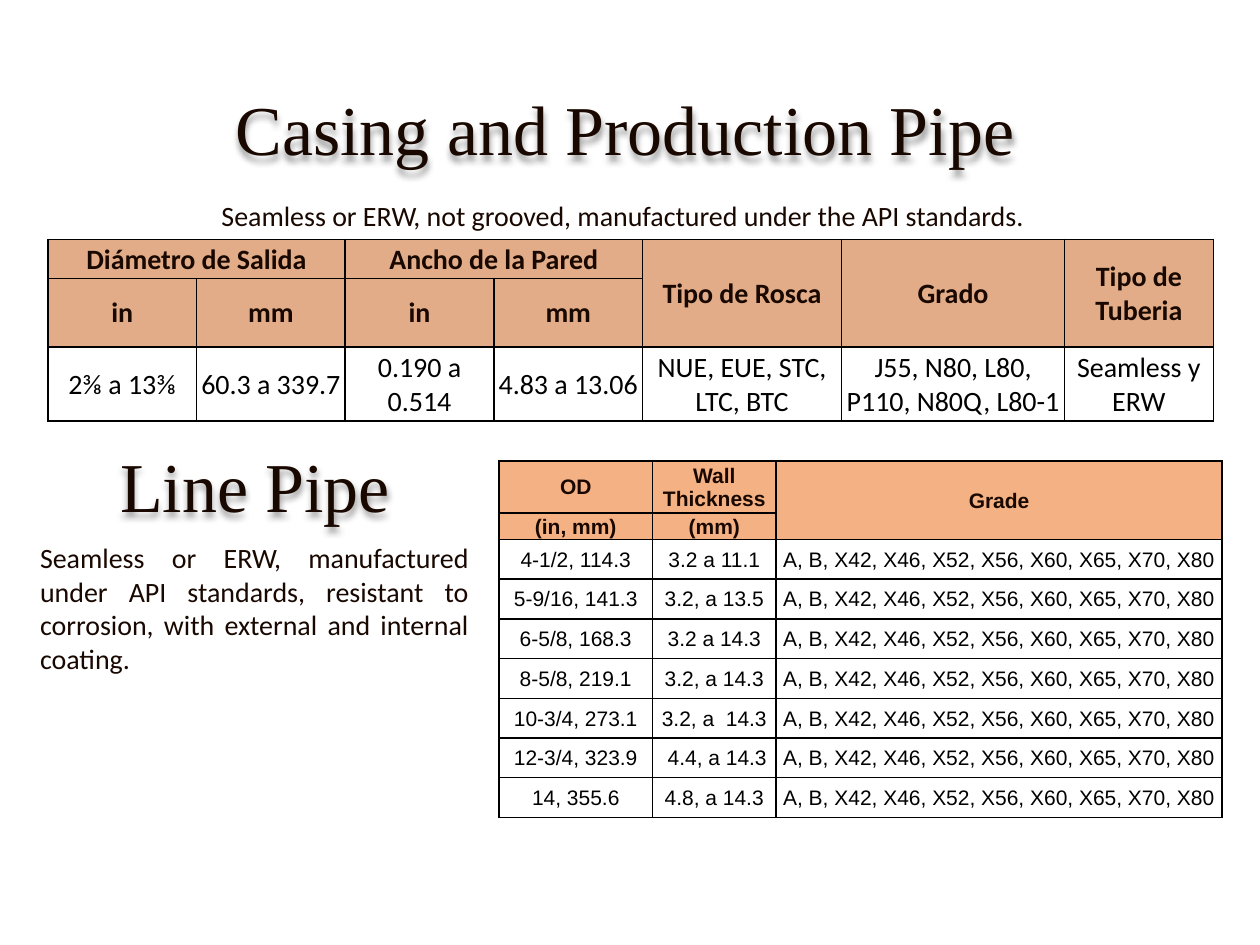
from lxml.etree import SubElement
from pptx import Presentation
from pptx.dml.color import RGBColor
from pptx.enum.text import MSO_ANCHOR, PP_ALIGN
from pptx.oxml import parse_xml
from pptx.oxml.ns import qn
from pptx.util import Inches, Pt

INK = RGBColor(0x19, 0x08, 0x00)
BLACK = RGBColor(0x00, 0x00, 0x00)
RUST = RGBColor(0xC5, 0x5A, 0x11)
PEACH = RGBColor(0xF4, 0xB1, 0x83)

A_NS = "http://schemas.openxmlformats.org/drawingml/2006/main"
SHADOW = (f'<a:effectLst xmlns:a="{A_NS}">'
          '<a:outerShdw blurRad="50800" dist="38100" dir="5400000" algn="t" rotWithShape="0">'
          '<a:srgbClr val="000000"><a:alpha val="40000"/></a:srgbClr>'
          '</a:outerShdw></a:effectLst>')
BORDER = (f'<a:{{side}} xmlns:a="{A_NS}" w="12700">'
          '<a:solidFill><a:srgbClr val="000000"/></a:solidFill></a:{side}>')

GRADES = "A, B, X42, X46, X52, X56, X60, X65, X70, X80"
CASING_ROWS = [
    ["Diámetro de Salida", "", "Ancho de la Pared", "",
     "Tipo de Rosca", "Grado", "Tipo de Tuberia"],
    ["in", "mm", "in", "mm", "", "", ""],
    ["2⅜ a 13⅜", "60.3 a 339.7", "0.190 a 0.514", "4.83 a 13.06",
     "NUE, EUE, STC, LTC, BTC", "J55, N80, L80, P110, N80Q, L80-1", "Seamless y ERW"],
]
LINE_SIZES = [
    ("4-1/2, 114.3", "3.2 a 11.1"),
    ("5-9/16, 141.3", "3.2, a 13.5"),
    ("6-5/8, 168.3", "3.2 a 14.3"),
    ("8-5/8, 219.1", "3.2, a 14.3"),
    ("10-3/4, 273.1", "3.2, a  14.3"),
    ("12-3/4, 323.9", " 4.4, a 14.3"),
    ("14, 355.6", "4.8, a 14.3"),
]
LINE_ROWS = [["OD", "Wall Thickness", "Grade"], ["(in, mm)", "(mm)", ""]]
LINE_ROWS += [[od, wall, GRADES] for od, wall in LINE_SIZES]


def set_font(font, color, **values):
    for name, value in values.items():
        setattr(font, name, value)
    font.color.rgb = color


def add_text(s, box, text, align, spacing, wrap=True, **font):
    sp = s.shapes.add_textbox(*map(Inches, box))
    tf = sp.text_frame
    tf.word_wrap = wrap
    p = tf.paragraphs[0]
    p.alignment, p.line_spacing = align, spacing
    r = p.add_run()
    r.text = text
    set_font(r.font, INK, **font)
    return sp


def add_heading(s, box, text):
    sp = add_text(s, box, text, PP_ALIGN.CENTER, 0.9, wrap=False,
                  name="Times New Roman", size=Pt(40))
    sp.text_frame.vertical_anchor = MSO_ANCHOR.MIDDLE
    sp.element.spPr.append(parse_xml(SHADOW))


def add_body(s, box, text, spacing):
    add_text(s, box, text, PP_ALIGN.JUSTIFY, spacing, name="Calibri", size=Pt(16))


def format_cell(cell, text, header, fill, alpha, **font):
    cell.vertical_anchor = MSO_ANCHOR.MIDDLE
    for side in ("left", "right", "top"):
        setattr(cell, f"margin_{side}", Inches(0.01))
    cell.margin_bottom = 0
    p = cell.text_frame.paragraphs[0]
    p.alignment = PP_ALIGN.CENTER
    set_font(p.font, INK if header else BLACK, bold=header, **font)
    if text:
        r = p.add_run()
        r.text = text
        set_font(r.font, INK if header else BLACK, bold=header, **font)
    tc_pr = cell._tc.get_or_add_tcPr()
    for side in ("lnL", "lnR", "lnT", "lnB"):
        tc_pr.append(parse_xml(BORDER.format(side=side)))
    if not header:
        cell.fill.background()
        return
    cell.fill.solid()
    cell.fill.fore_color.rgb = fill
    if alpha < 100:
        color = tc_pr.find(qn("a:solidFill")).find(qn("a:srgbClr"))
        SubElement(color, qn("a:alpha")).set("val", str(alpha * 1000))


def add_grid(s, box, rows, widths, heights, merges, fill, alpha=100, **font):
    """Table with two header rows; merges hold (row, col, last row, last col)."""
    table = s.shapes.add_table(len(rows), len(widths), *map(Inches, box)).table
    table.first_row = table.horz_banding = False
    for column, width in zip(table.columns, widths):
        column.width = Inches(width)
    for row, height in zip(table.rows, heights):
        row.height = Inches(height)
    for i, texts in enumerate(rows):
        for j, text in enumerate(texts):
            format_cell(table.cell(i, j), text, i < 2, fill, alpha, **font)
    for top, left, bottom, right in merges:
        table.cell(top, left).merge(table.cell(bottom, right))


def add_casing_section(s, x, y):
    add_heading(s, (x + 1.37, y, 6.42, 0.71), "Casing and Production Pipe")
    add_body(s, (x + 1.28, y + 0.69, 6.6, 0.5),
             "Seamless or ERW, not grooved, manufactured under the API standards.", 1.5)
    add_grid(s, (x, y + 1.2, 9.25, 1.44), CASING_ROWS,
             [1.18] * 4 + [1.58, 1.77, 1.18], [0.31, 0.54, 0.59],
             [(0, 0, 0, 1), (0, 2, 0, 3)] + [(0, c, 1, c) for c in (4, 5, 6)],
             RUST, alpha=50, name="Calibri", size=Pt(16))


def add_line_section(s, x, y):
    add_heading(s, (x + 0.62, y, 2.37, 0.71), "Line Pipe")
    add_body(s, (x, y + 0.71, 3.6, 1.18),
             "Seamless or ERW, manufactured under API standards, resistant to "
             "corrosion, with external and internal coating.", 1.0)
    add_grid(s, (x + 3.74, y + 0.13, 5.75, 2.82), LINE_ROWS,
             [1.22, 0.98, 3.54], [0.41, 0.2] + [2.21 / 7] * 7,
             [(0, 2, 1, 2)], PEACH, name="Arial", size=Pt(12))


def main():
    prs = Presentation()
    prs.slide_width, prs.slide_height = Inches(10), Inches(7.5)
    s = prs.slides.add_slide(prs.slide_layouts[6])
    # Casing: heading, note and table across the top
    add_casing_section(s, 0.38, 0.7)
    # Line pipe: heading and note on the left, table on the right
    add_line_section(s, 0.22, 3.53)
    prs.save("out.pptx")


if __name__ == "__main__":
    main()
